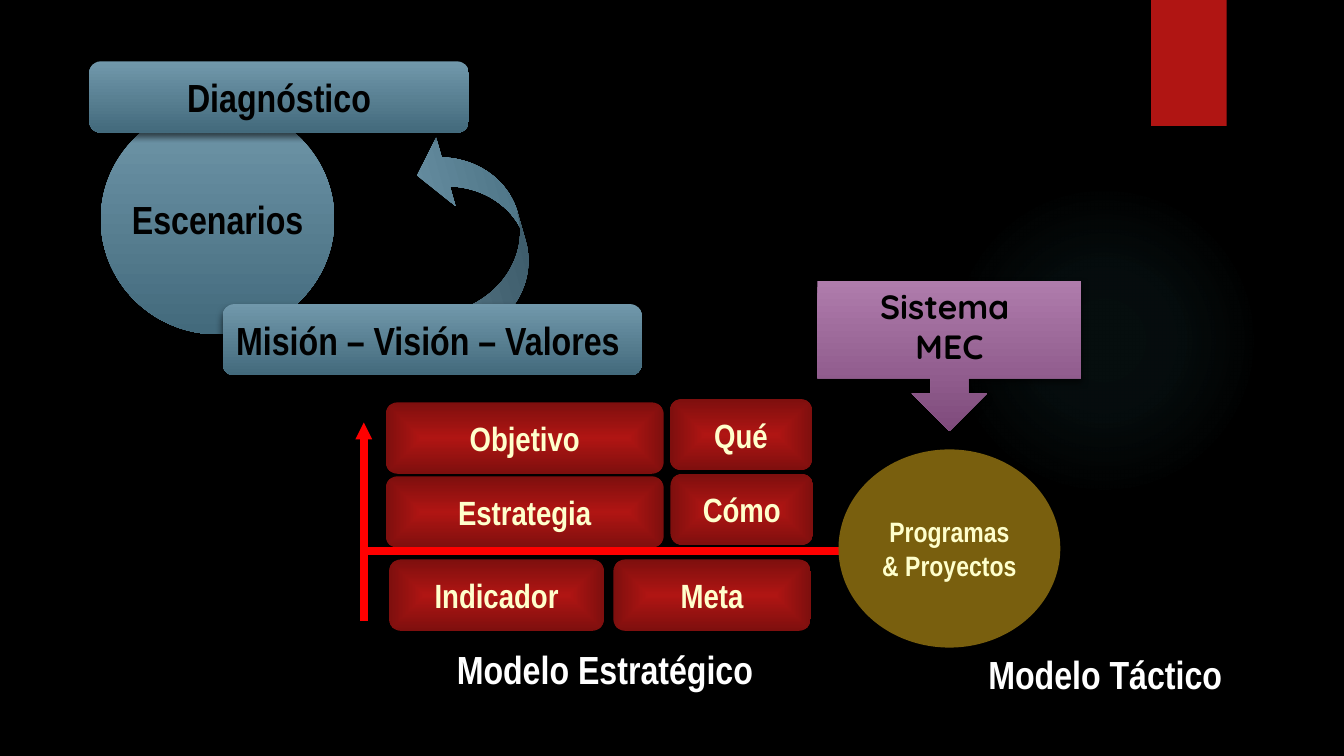
from lxml.etree import SubElement
from pptx import Presentation
from pptx.dml.color import RGBColor
from pptx.enum.shapes import MSO_CONNECTOR, MSO_SHAPE
from pptx.enum.text import MSO_ANCHOR, PP_ALIGN
from pptx.oxml.ns import qn
from pptx.util import Inches, Pt

BLACK = RGBColor(0x00, 0x00, 0x00)
WHITE = RGBColor(0xFF, 0xFF, 0xFF)
CREAM = RGBColor(0xFF, 0xFF, 0xCC)
RED = RGBColor(0xB0, 0x15, 0x13)
DARK_RED = RGBColor(0x7E, 0x0F, 0x0E)
LINE_RED = RGBColor(0xFF, 0x00, 0x00)
BLUE = RGBColor(0x71, 0x98, 0xAB)
DARK_BLUE = RGBColor(0x43, 0x6A, 0x7C)
PURPLE = RGBColor(0xAF, 0x7C, 0xAC)
DARK_PURPLE = RGBColor(0x7F, 0x4B, 0x7C)
GOLD = RGBColor(0x79, 0x5F, 0x0E)
TEAL = RGBColor(0x50, 0xB9, 0xC1)

STEEL = [(0, BLUE, 100), (100, DARK_BLUE, 100)]
CRIMSON = [(0, RED, 100), (100, DARK_RED, 100)]
VIOLET = [(0, PURPLE, 100), (100, DARK_PURPLE, 100)]
GLOW = [(0, TEAL, 7), (36, TEAL, 6), (69, TEAL, 0)]
SOFT = (60, 5, 3)
BAR = 8.5


def add(parent, tag, **attrs):
    """Append a drawing element with the given attributes."""
    return SubElement(parent, qn(f"a:{tag}"), {k: str(v) for k, v in attrs.items()})


def add_color(parent, color, alpha):
    """Append a colour with its opacity in percent."""
    add(add(parent, "srgbClr", val=color), "alpha", val=alpha * 1000)


def write(tf, text, size=28, color=BLACK, font="Arial Narrow", wrap=False,
          anchor=MSO_ANCHOR.MIDDLE):
    """Fill a text frame with centred bold paragraphs, one per line."""
    tf.word_wrap = wrap
    tf.vertical_anchor = anchor
    for i, line in enumerate(text.split("\n")):
        p = tf.add_paragraph() if i else tf.paragraphs[0]
        p.alignment = PP_ALIGN.CENTER
        r = p.add_run()
        r.text = line
        r.font.size, r.font.bold, r.font.name = Pt(size), True, font
        r.font.color.rgb = color


class Board:
    """Current slide with a grid of 160 columns by 90 rows."""

    def __init__(self, prs):
        """Add a blank slide with a black background."""
        self.s = prs.slides.add_slide(prs.slide_layouts[6])
        self.cell = prs.slide_height / 90
        fill = self.s.background.fill
        fill.solid()
        fill.fore_color.rgb = BLACK

    def grid(self, *cells):
        """Turn grid cells into lengths."""
        return [round(c * self.cell) for c in cells]

    def shape(self, kind, box, fill=None, path=None, shadow=None, text=None, **fmt):
        """Add a preset shape with a plain or gradient fill."""
        sp = self.s.shapes.add_shape(kind, *self.grid(*box))
        sp.shadow.inherit = False
        sp.line.fill.background()
        sp.fill.background()
        if isinstance(fill, RGBColor):
            sp.fill.solid()
            sp.fill.fore_color.rgb = fill
        elif fill:
            self.gradient(sp, fill, path)
        if shadow:
            alpha, blur, dist = shadow
            effects = sp._element.spPr.find(qn("a:effectLst"))
            outer = add(effects, "outerShdw", blurRad=Pt(blur), dist=Pt(dist),
                        dir=5400000, rotWithShape=0)
            add_color(outer, BLACK, alpha)
        if text:
            write(sp.text_frame, text, **fmt)
        return sp

    def gradient(self, sp, stops, path):
        """Give a shape a vertical gradient, or one along a path."""
        spPr = sp._element.spPr
        grad = add(spPr, "gradFill", rotWithShape=1)
        stop_list = add(grad, "gsLst")
        for pos, color, alpha in stops:
            add_color(add(stop_list, "gs", pos=pos * 1000), color, alpha)
        if path:
            add(add(grad, "path", path=path), "fillToRect",
                l=50000, t=50000, r=50000, b=50000)
        else:
            add(grad, "lin", ang=5400000, scaled=0)
        spPr.replace(spPr.find(qn("a:noFill")), grad)

    def bar(self, text, x, y, w):
        """Add a blue rounded bar."""
        self.shape(MSO_SHAPE.ROUNDED_RECTANGLE, (x, y, w, BAR), STEEL,
                   shadow=SOFT, text=text)

    def button(self, text, x, y, w):
        """Add a red rounded button."""
        self.shape(MSO_SHAPE.ROUNDED_RECTANGLE, (x, y, w, BAR), CRIMSON, "shape",
                   text=text, size=24, color=CREAM)

    def caption(self, text, x, y, w):
        """Add a white caption without a fill."""
        self.shape(MSO_SHAPE.ROUNDED_RECTANGLE, (x, y, w, 5.6), text=text, color=WHITE)

    def axis(self, ends, arrow=False):
        """Add a thick red line, with an arrowhead at its end if asked."""
        c = self.s.shapes.add_connector(MSO_CONNECTOR.STRAIGHT, *self.grid(*ends))
        c.line.color.rgb = LINE_RED
        c.line.width = Pt(6)
        if arrow:
            add(c.line._get_or_add_ln(), "tailEnd", type="triangle", w="sm", len="sm")
        add(c._element.spPr, "effectLst")


def main():
    """Build the slide and save it."""
    prs = Presentation()
    prs.slide_width, prs.slide_height = Inches(13.33), Inches(7.5)
    b = Board(prs)
    b.shape(MSO_SHAPE.OVAL, (112.9, 22, 37, 37), GLOW, "circle")
    b.shape(MSO_SHAPE.RECTANGLE, (137, 0, 9, 15), RED, shadow=(45, 3, 2))
    b.shape(MSO_SHAPE.OVAL, (12, 12.4, 27.8, 27.4), STEEL, shadow=SOFT, text="Escenarios")
    for button in [("Objetivo", 45.9, 47.9, 33.1), ("Estrategia", 45.9, 56.7, 33.1),
                   ("Indicador", 46.3, 66.6, 25.6), ("Meta", 73, 66.6, 23.5),
                   ("Qué", 79.7, 47.5, 17), ("Cómo", 79.8, 56.4, 17)]:
        b.button(*button)
    loop = b.shape(MSO_SHAPE.CURVED_UP_ARROW, (44.5, 22.1, 24.6, 10.3), STEEL, shadow=SOFT)
    loop.rotation = 254.2
    for i, value in enumerate((0.35, 0.82, 0.33)):
        loop.adjustments[i] = value
    b.axis((43.3, 73.9, 43.3, 50.3), arrow=True)
    b.caption("Modelo Estratégico", 50.3, 76.8, 43.4)
    b.caption("Modelo Táctico", 117.4, 77.4, 28.3)
    b.axis((118.9, 65.6, 43.3, 65.6))
    b.bar("Misión – Visión – Valores ", 26.5, 36.2, 49.9)
    b.shape(MSO_SHAPE.DOWN_ARROW_CALLOUT, (97.3, 33.4, 31.4, 17.9), VIOLET, shadow=SOFT,
            text="Sistema \nMEC", size=24, font="Quicksand", wrap=True,
            anchor=MSO_ANCHOR.TOP)
    b.bar("Diagnóstico", 10.6, 7.3, 45.2)
    b.shape(MSO_SHAPE.OVAL, (99.8, 53.5, 26.4, 23.6), GOLD,
            text="Programas\n& Proyectos", size=20, color=CREAM)
    prs.save("out.pptx")


if __name__ == "__main__":
    main()
